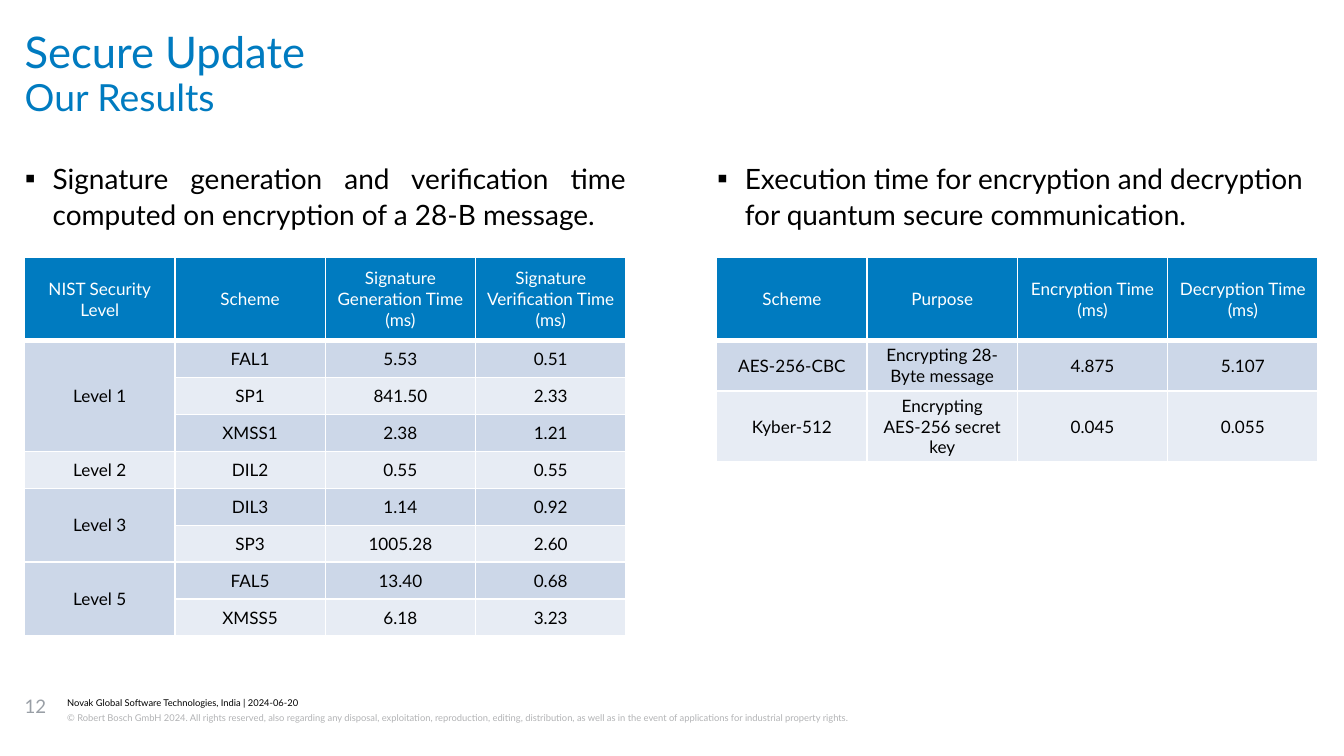
from dataclasses import dataclass
from typing import Optional

from lxml.etree import SubElement
from pptx import Presentation
from pptx.dml.color import RGBColor
from pptx.enum.text import MSO_ANCHOR as Anchor, MSO_AUTO_SIZE as AutoSize, PP_ALIGN as Align
from pptx.oxml.ns import qn
from pptx.util import Inches, Pt

COLORS = {
    "blue": "007BC0", "black": "000000", "white": "FFFFFF", "gray": "B2B3B5",
    "number": "999FA6", "band_dark": "CCD7E8", "band_light": "E7ECF4",
}
FONT = "Lato"

# Grid: two panels of four columns each
MARGIN, PANEL, GAP, COLUMNS = 0.22, 5.37, 0.81, 4
FULL = 2 * PANEL + GAP
TITLE_TOP, TITLE_ROW = 0.28, 0.43
LIST_TOP, LIST_HEIGHT, TABLE_TOP = 1.42, 4.64, 2.3
HEADER_ROW, BODY_ROW = 0.74, 0.33
FOOTER_LEFT, FOOTER_WIDTH = 0.6, 9.98


@dataclass
class Style:
    size: float
    color: str
    spacing: Optional[float] = None
    align: Align = Align.LEFT
    after: float = 0


@dataclass
class Panel:
    placeholder: int
    align: Align
    message: str
    rows: list[list[str]]
    heights: list[float]

    def left(self, position: int) -> float:
        return MARGIN + position * (PANEL + GAP)


TITLE = Style(28, "blue", 0.89)
SUBTITLE = Style(24, "blue", 0.89)

# An empty first cell continues the level above it
PANELS = [
    Panel(2, Align.JUSTIFY,
          "Signature generation and verification time computed on encryption of a 28-B message.",
          [["NIST Security\nLevel", "Scheme", "Signature\nGeneration Time (ms)",
            "Signature Verification Time (ms)"],
           ["Level 1", "FAL1", "5.53", "0.51"],
           ["", "SP1", "841.50", "2.33"],
           ["", "XMSS1", "2.38", "1.21"],
           ["Level 2", "DIL2", "0.55", "0.55"],
           ["Level 3", "DIL3", "1.14", "0.92"],
           ["", "SP3", "1005.28", "2.60"],
           ["Level 5", "FAL5", "13.40", "0.68"],
           ["", "XMSS5", "6.18", "3.23"]],
          [HEADER_ROW] + [BODY_ROW] * 8),
    Panel(4, Align.LEFT,
          "Execution time for encryption and decryption for quantum secure communication.",
          [["Scheme", "Purpose", "Encryption Time (ms)", "Decryption Time (ms)"],
           ["AES-256-CBC", "Encrypting 28-Byte message", "4.875", "5.107"],
           ["Kyber-512", "Encrypting AES-256 secret key", "0.045", "0.055"]],
          [HEADER_ROW, 0.44, 0.45]),
]


def rgb(name: str) -> RGBColor:
    return RGBColor.from_string(COLORS[name])


def format_text(frame, style: Style) -> None:
    for para in frame.paragraphs:
        para.alignment = style.align
        para.line_spacing = style.spacing
        para.space_before, para.space_after = Pt(0), Pt(style.after)
        for span in para.runs:
            span.font.name, span.font.size = FONT, Pt(style.size)
            span.font.bold = False
            span.font.color.rgb = rgb(style.color)


def fill_box(box, left: float, top: float, width: float, height: float,
             text: str, style: Style, bullet: str = "") -> None:
    box.left, box.top = Inches(left), Inches(top)
    box.width, box.height = Inches(width), Inches(height)
    frame = box.text_frame
    frame.text = text
    frame.word_wrap, frame.auto_size = True, AutoSize.NONE
    frame.vertical_anchor = Anchor.TOP
    frame.margin_left = frame.margin_right = frame.margin_top = frame.margin_bottom = 0
    if bullet:
        properties = frame.paragraphs[0]._p.get_or_add_pPr()
        properties.set("marL", str(Inches(0.25)))
        properties.set("indent", str(-Inches(0.25)))
        SubElement(properties, qn("a:buFont")).set("typeface", FONT)
        SubElement(properties, qn("a:buChar")).set("char", bullet)
    format_text(frame, style)


def add_text(page, left: float, top: float, width: float, height: float,
             text: str, style: Style) -> None:
    box = page.shapes.add_textbox(0, 0, 0, 0)
    fill_box(box, left, top, width, height, text, style)


def add_borders(cell, bottom: float) -> None:
    properties = cell._tc.get_or_add_tcPr()
    for side, width in (("L", 1), ("R", 1), ("T", 1), ("B", bottom)):
        line = SubElement(properties, qn(f"a:ln{side}"), w=str(Pt(width)))
        fill = SubElement(line, qn("a:solidFill"))
        SubElement(fill, qn("a:srgbClr"), val=COLORS["white"])


def add_results(page, panel: Panel, left: float) -> None:
    table = page.shapes.add_table(
        len(panel.rows), COLUMNS, Inches(left), Inches(TABLE_TOP),
        Inches(PANEL), Inches(sum(panel.heights))).table
    for column in table.columns:
        column.width = Inches(PANEL / COLUMNS)
    level_row = 0
    for r, (row, height) in enumerate(zip(panel.rows, panel.heights)):
        table.rows[r].height = Inches(height)
        header = r == 0
        band = "blue" if header else "band_dark" if r % 2 else "band_light"
        style = Style(11, "white" if header else "black", align=Align.CENTER)
        for c, text in enumerate(row):
            cell = table.cell(r, c)
            cell.text_frame.text = text
            cell.vertical_anchor = Anchor.MIDDLE
            cell.margin_left = cell.margin_right = Inches(0.09)
            cell.margin_top = cell.margin_bottom = Inches(0.04)
            add_borders(cell, bottom=3 if header else 1)
            cell.fill.solid()
            cell.fill.fore_color.rgb = rgb(band)
            format_text(cell.text_frame, style)
        # Merge each level over its schemes
        if row[0]:
            level_row = r
        elif r + 1 == len(panel.rows) or panel.rows[r + 1][0]:
            table.cell(level_row, 0).merge(table.cell(r, 0))


def main() -> None:
    deck = Presentation()
    deck.slide_width, deck.slide_height = Inches(12), Inches(6.75)
    page = deck.slides.add_slide(deck.slide_layouts.get_by_name("Comparison"))
    holders = {holder.placeholder_format.idx: holder for holder in page.placeholders}

    # Headings
    fill_box(holders[1], MARGIN, TITLE_TOP, FULL, TITLE_ROW, "Secure Update", TITLE)
    fill_box(holders[0], MARGIN, TITLE_TOP + TITLE_ROW, FULL, TITLE_ROW,
             "Our Results", SUBTITLE)
    unused = holders[3].element
    unused.getparent().remove(unused)

    # Panels: a bullet above a table
    for position, panel in enumerate(PANELS):
        left = panel.left(position)
        fill_box(holders[panel.placeholder], left, LIST_TOP, PANEL, LIST_HEIGHT,
                 panel.message, Style(18, "black", 1.07, panel.align), bullet="▪")
        add_results(page, panel, left)

    # Footer
    add_text(page, MARGIN, 6.2, 0.32, 0.45, "12", Style(12, "number"))
    add_text(page, FOOTER_LEFT, 6.22, FOOTER_WIDTH, 0.12,
             "Novak Global Software Technologies, India | 2024-06-20",
             Style(6, "black", 1.07, after=1))
    add_text(page, FOOTER_LEFT, 6.34, FOOTER_WIDTH, 0.24,
             "© Robert Bosch GmbH 2024. All rights reserved, also regarding any disposal, "
             "exploitation, reproduction, editing, distribution, as well as in the event of "
             "applications for industrial property rights.",
             Style(6, "gray", 1.2, after=1))
    deck.save("out.pptx")


if __name__ == "__main__":
    main()
